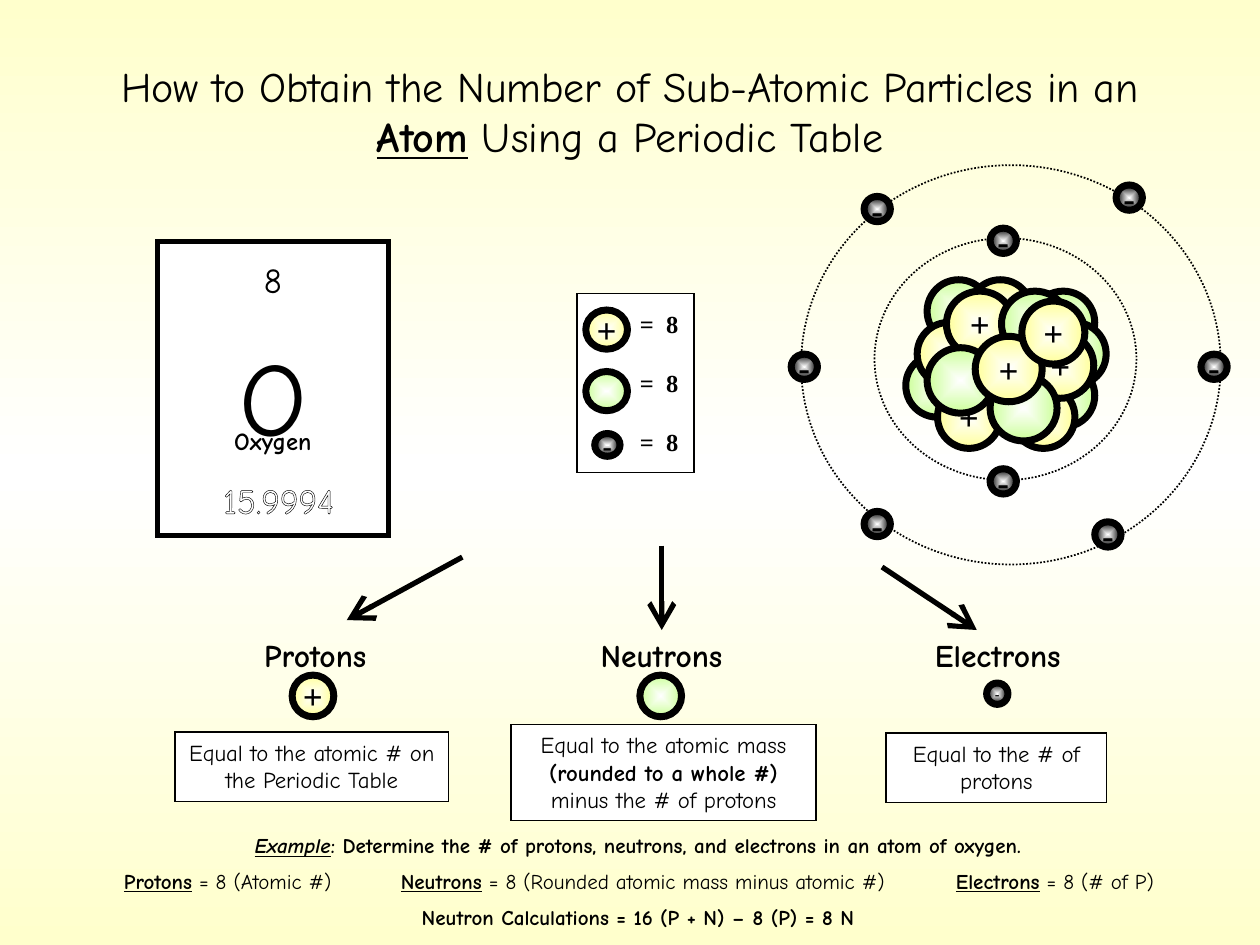
"""Build a slide on finding the numbers of sub-atomic particles in an atom."""
from dataclasses import dataclass

from pptx import Presentation
from pptx.dml.color import RGBColor
from pptx.enum.dml import MSO_LINE
from pptx.enum.shapes import MSO_CONNECTOR, MSO_SHAPE
from pptx.enum.text import MSO_ANCHOR, PP_ALIGN
from pptx.oxml import parse_xml
from pptx.oxml.ns import nsdecls, qn
from pptx.util import Cm, Pt


@dataclass(frozen=True)
class Theme:
    font: str = "Comic Neue"
    sign_font: str = "Times New Roman"
    ink: str = "000000"
    paper: str = "FFFFFF"
    cream: str = "FFFFCC"
    proton: str = "FFFF99"
    neutron: str = "CCFF99"
    number: str = "00FF00"
    title: int = 24
    symbol: int = 60
    figure: int = 20
    label: int = 18
    name: int = 14
    rule: int = 13
    example: int = 12
    sign: int = 20


T = Theme()
KINDS = {"proton": (T.proton, "+"), "neutron": (T.neutron, ""), "electron": (T.ink, "-")}


def set_gradient(props, stops, direction):
    gs = "".join(
        f'<a:gs pos="{pos * 1000}"><a:srgbClr val="{color}"/></a:gs>' for pos, color in stops)
    grad = parse_xml(
        f'<a:gradFill {nsdecls("a")} rotWithShape="1"><a:gsLst>{gs}</a:gsLst>{direction}</a:gradFill>')
    props.replace(props.find(qn("a:noFill")), grad)


def set_tabs(p, stops):
    tabs = "".join(f'<a:tab pos="{Cm(stop)}" algn="l"/>' for stop in stops)
    p._p.get_or_add_pPr().append(parse_xml(f'<a:tabLst {nsdecls("a")}>{tabs}</a:tabLst>'))


def add_run(p, text, size, style="", font=T.font, color=T.ink):
    r = p.add_run()
    r.text = text
    r.font.name = font
    r.font.size = Pt(size)
    r.font.color.rgb = RGBColor.from_string(color)
    r.font.bold = "b" in style
    r.font.italic = "i" in style
    r.font.underline = "u" in style
    return r


def outline_run(r, width):
    ln = parse_xml(
        f'<a:ln {nsdecls("a")} w="{Pt(width)}"><a:solidFill>'
        f'<a:srgbClr val="{T.ink}"/></a:solidFill></a:ln>')
    r.font._element.insert(0, ln)


def add_text(shapes, box, runs, size, anchor=MSO_ANCHOR.TOP):
    tf = shapes.add_textbox(*map(Cm, box)).text_frame
    fill_text(tf, runs, size, anchor=anchor)
    return tf


def fill_text(tf, runs, size, wrap=True, anchor=MSO_ANCHOR.TOP, font=T.font):
    tf.word_wrap = wrap
    tf.vertical_anchor = anchor
    p = tf.paragraphs[0]
    p.alignment = PP_ALIGN.CENTER
    for text, style in runs:
        add_run(p, text, size, style, font)


def add_shape(shapes, preset, box, width, fill=None):
    sp = shapes.add_shape(preset, *map(Cm, box))
    sp.shadow.inherit = False
    if fill:
        sp.fill.solid()
        sp.fill.fore_color.rgb = RGBColor.from_string(fill)
    else:
        sp.fill.background()
    sp.line.color.rgb = RGBColor.from_string(T.ink)
    sp.line.width = Pt(width)
    sp.line._get_or_add_ln().append(parse_xml(f'<a:miter {nsdecls("a")} lim="800000"/>'))
    return sp


def add_particle(shapes, kind, x, y, w, h, size=T.sign):
    color, sign = KINDS[kind]
    sp = add_shape(shapes, MSO_SHAPE.OVAL, (x, y, w, h), 4)
    set_gradient(sp.element.spPr, [(0, T.paper), (100, color)],
                 '<a:path path="shape"><a:fillToRect l="50000" t="50000" r="50000" b="50000"/></a:path>')
    if sign:
        fill_text(sp.text_frame, [(sign, "b")], size, False, MSO_ANCHOR.MIDDLE, T.sign_font)


def add_arrow(shapes, start, end):
    line = shapes.add_connector(MSO_CONNECTOR.STRAIGHT, *map(Cm, start + end))
    line.line.color.rgb = RGBColor.from_string(T.ink)
    line.line.width = Pt(3)
    line.line._get_or_add_ln().append(
        parse_xml(f'<a:tailEnd {nsdecls("a")} type="arrow" w="lg" len="lg"/>'))
    line._element.spPr.append(parse_xml(f'<a:effectLst {nsdecls("a")}/>'))


def add_element_tile(shapes):
    add_shape(shapes, MSO_SHAPE.RECTANGLE, (3.18, 4.87, 4.65, 5.92), 3, T.paper)
    for text, box, size, style, color, width in [
        ("8", (3.5, 5.08, 4, 0.84), T.figure, "", T.number, 1.5),
        ("O", (3.5, 6.55, 4, 1.47), T.symbol, "", T.ink, 0.75),
        ("Oxygen", (3.5, 8.46, 4, 0.64), T.name, "b", T.ink, 0.75),
        ("15.9994", (3.62, 9.53, 4, 0.84), T.figure, "", T.paper, 1.5),
    ]:
        tf = add_text(shapes, box, [], size)
        r = add_run(tf.paragraphs[0], text, size, style, color=color)
        outline_run(r, width)
        if color == T.number:
            clr = r.font._element.find(qn("a:solidFill"))[0]
            clr.append(parse_xml(f'<a:alpha {nsdecls("a")} val="23000"/>'))


def add_atom(shapes):
    for x, y in [(20.8, 5.87), (18.26, 7.14), (21.03, 6.5), (20.8, 7.34), (18.69, 5.64)]:
        add_particle(shapes, "neutron", x, y, 1.27, 1.27)
    for x, y in [(20.4, 7.77), (19.53, 5.64), (18.49, 6.5), (18.9, 7.77)]:
        add_particle(shapes, "proton", x, y, 1.27, 1.27)
    front = shapes.add_group_shape().shapes
    for kind, x, y in [
        ("proton", 19.08, 5.87), ("neutron", 20.19, 5.87), ("proton", 20.7, 6.71),
        ("neutron", 18.69, 7.01), ("neutron", 19.96, 7.57), ("proton", 19.66, 6.78),
    ]:
        add_particle(front, kind, x, y, 1.35, 1.32)
    add_particle(shapes, "proton", 20.6, 6.07, 1.27, 1.27)
    for orbit in [(17.63, 4.8, 5.28, 4.88), (16.15, 3.33, 8.46, 8.05)]:
        add_shape(shapes, MSO_SHAPE.OVAL, orbit, 1).line.dash_style = MSO_LINE.ROUND_DOT
    for x, y in [(19.96, 4.6), (19.96, 9.45), (22.5, 3.73), (24.21, 7.14),
                 (22.07, 10.52), (17.42, 10.31), (17.42, 3.96), (15.95, 7.14)]:
        add_particle(shapes, "electron", x, y, 0.53, 0.51)


def add_key(shapes):
    key = shapes.add_group_shape().shapes
    add_shape(key, MSO_SHAPE.RECTANGLE, (11.63, 5.92, 2.36, 3.61), 0.75, T.paper)
    add_particle(key, "proton", 11.81, 6.25, 0.84, 0.79)
    add_particle(key, "neutron", 11.81, 7.49, 0.84, 0.79)
    add_particle(key, "electron", 11.99, 8.74, 0.51, 0.46, 16)
    tf = add_text(key, (12.65, 6.1, 1.73, 3.2), [], T.name)
    for i in range(len(KINDS)):
        p = tf.add_paragraph() if i else tf.paragraphs[0]
        p.alignment = PP_ALIGN.LEFT
        if i:
            p.space_before = Pt(17)
        set_tabs(p, [0.53])
        add_run(p, "=\t8", T.name, "b", T.sign_font)


def add_rules(shapes):
    for name, x, start, end, particle, box, runs in [
        ("Protons", 4.45, (9.32, 11.23), (6.99, 12.5), ("proton", 5.89, 13.61, 0.84, 0.84),
         (3.53, 14.76, 5.51, 1.4), [("Equal to the atomic # on the Periodic Table", "")]),
        ("Neutrons", 11.43, (13.34, 11), (13.34, 12.7), ("neutron", 12.9, 13.61, 0.84, 0.84),
         (10.3, 14.61, 6.15, 1.93), [("Equal to the atomic mass ", ""),
                                     ("(rounded to a whole #)", "b"),
                                     (" minus the # of protons", "")]),
        ("Electrons", 18.21, (17.78, 11.43), (19.69, 12.7), ("electron", 19.89, 13.77, 0.43, 0.43, 8),
         (17.86, 14.78, 4.45, 1.4), [("Equal to the # of protons", "")]),
    ]:
        add_arrow(shapes, start, end)
        add_text(shapes, (x, 12.7, 3.81, 1.02), [(name, "b")], T.label)
        sp = add_shape(shapes, MSO_SHAPE.RECTANGLE, box, 0.75, T.paper)
        fill_text(sp.text_frame, runs, T.rule)
        add_particle(shapes, *particle)


def add_example(shapes):
    tf = add_text(shapes, (0.38, 16.66, 24.97, 2.29), [
        ("Example", "biu"),
        (": Determine the # of protons, neutrons, and electrons in an atom of oxygen.", "b"),
    ], T.example)
    p = tf.add_paragraph()
    p.space_before = Pt(6)
    set_tabs(p, [1.87, 7.45, 18.64])
    for name, answer in [("Protons", " = 8 (Atomic #)"),
                         ("Neutrons", " = 8 (Rounded atomic mass minus atomic #)"),
                         ("Electrons", " = 8 (# of P)")]:
        add_run(p, "\t", T.example)
        add_run(p, name, T.example, "bu")
        add_run(p, answer, T.example)
    p = tf.add_paragraph()
    p.alignment = PP_ALIGN.CENTER
    p.space_before = Pt(6)
    add_run(p, "Neutron Calculations = 16 (P + N) – 8 (P) = 8 N", T.example, "b")


def main():
    prs = Presentation()
    prs.slide_width, prs.slide_height = Cm(25.4), Cm(19.05)
    s = prs.slides.add_slide(prs.slide_layouts[6])
    s.background.fill.background()
    set_gradient(s.element.find(".//" + qn("p:bgPr")),
                 [(0, T.cream), (50, T.paper), (100, T.cream)], '<a:lin ang="5400000" scaled="1"/>')
    add_text(s.shapes, (1.27, 0.64, 22.86, 3.18), [
        ("How to Obtain the Number of Sub-Atomic Particles in an ", ""),
        ("Atom", "bu"), (" Using a Periodic Table", ""),
    ], T.title, MSO_ANCHOR.MIDDLE)
    add_element_tile(s.shapes)
    add_rules(s.shapes)
    add_example(s.shapes)
    add_atom(s.shapes)
    add_key(s.shapes)
    prs.save("out.pptx")


if __name__ == "__main__":
    main()
